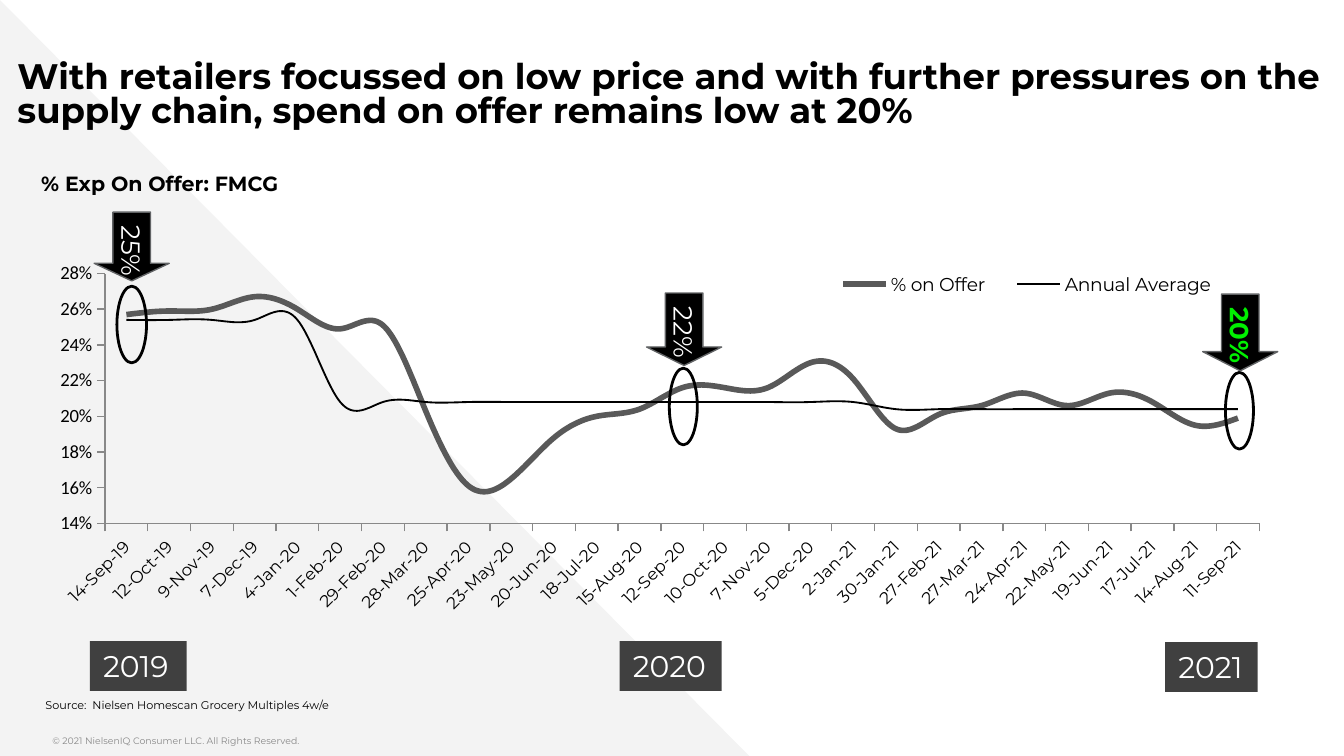
import pptx
import pptx.chart.data
import pptx.dml.color
import pptx.enum.chart
import pptx.enum.shapes
import pptx.enum.text
import pptx.oxml
import pptx.oxml.ns
import pptx.util

Cm, Pt = pptx.util.Cm, pptx.util.Pt
SHAPE = pptx.enum.shapes.MSO_SHAPE
ANCHOR = pptx.enum.text.MSO_ANCHOR
ALIGN = pptx.enum.text.PP_ALIGN
qn = pptx.oxml.ns.qn

FONT = "Montserrat"
COLORS = {
    "black": "000000", "white": "FFFFFF", "green": "00F000",
    "wedge": "F3F3F3", "muted": "888888", "year": "404040",
    "offer": "595959", "arrow_edge": "616365",
}

# Four-weekly periods as date serials, 14-Sep-19 to 11-Sep-21
PERIODS = range(43722, 44451, 28)
ON_OFFER = [
    0.257, 0.259, 0.26, 0.267, 0.26, 0.249, 0.251, 0.203, 0.161,
    0.165, 0.188, 0.2, 0.204, 0.216, 0.216, 0.216, 0.23, 0.221,
    0.193, 0.201, 0.206, 0.213, 0.206, 0.213, 0.208, 0.195, 0.199,
]
ANNUAL_AVERAGE = [0.254] * 5 + [0.208] * 13 + [0.204] * 9


def rgb(name):
    return pptx.dml.color.RGBColor.from_string(COLORS[name])


def style_font(font, size, color="black", bold=False, name=FONT):
    font.name, font.size, font.bold = name, Pt(size), bold
    font.color.rgb = rgb(color)


def add_shape(slide, kind, box, fill=None, line=None, width=0.75):
    shape = slide.shapes.add_shape(kind, *map(Cm, box))
    shape.shadow.inherit = False
    if fill:
        shape.fill.solid()
        shape.fill.fore_color.rgb = rgb(fill)
    else:
        shape.fill.background()
    if line:
        shape.line.color.rgb = rgb(line)
        shape.line.width = Pt(width)
    else:
        shape.line.fill.background()
    return shape


def write(shape, text, size, color="black", bold=False, align=ALIGN.LEFT,
          anchor=ANCHOR.TOP, wrap=False):
    frame = shape.text_frame
    frame.text = text
    frame.word_wrap = wrap
    frame.vertical_anchor = anchor
    paragraph = frame.paragraphs[0]
    paragraph.alignment = align
    style_font(paragraph.font, size, color, bold)
    return frame


def set_insets(frame, left, vertical):
    frame.margin_left, frame.margin_right = Cm(left), 0
    frame.margin_top = frame.margin_bottom = Cm(vertical)


def add_text(slide, box, text, size, **style):
    return write(slide.shapes.add_textbox(*map(Cm, box)), text, size, **style)


def add_title(slide, text):
    title = slide.shapes.title
    title.left, title.top, title.width, title.height = map(Cm, (0.33, 0.94, 25.17, 1.75))
    frame = write(title, text, 19, bold=True, anchor=ANCHOR.MIDDLE, wrap=True)
    frame.auto_size = pptx.enum.text.MSO_AUTO_SIZE.NONE
    set_insets(frame, 0, 0.25)
    frame.paragraphs[0].line_spacing = 0.8


def add_callout(slide, box, text, color="white", bold=False):
    arrow = add_shape(slide, SHAPE.DOWN_ARROW, box, "black", "arrow_edge")
    arrow.adjustments[0], arrow.adjustments[1] = 0.5, 0.255
    frame = write(arrow, text, 14, color, bold, ALIGN.CENTER, ANCHOR.MIDDLE)
    frame._txBody.bodyPr.set("vert", "eaVert")


def add_year(slide, box, year):
    write(add_shape(slide, SHAPE.RECTANGLE, box, "year"), year, 16, "white")


def manual_layout(x, y, w, h, inner=False):
    target = '<c:layoutTarget val="inner"/>' if inner else ""
    return pptx.oxml.parse_xml(
        f'<c:layout {pptx.oxml.ns.nsdecls("c")}><c:manualLayout>{target}'
        '<c:xMode val="edge"/><c:yMode val="edge"/>'
        f'<c:x val="{x}"/><c:y val="{y}"/><c:w val="{w}"/><c:h val="{h}"/>'
        '</c:manualLayout></c:layout>')


def style_axis(axis, size, font_name):
    axis.has_major_gridlines = False
    axis.major_tick_mark = pptx.enum.chart.XL_TICK_MARK.OUTSIDE
    axis.minor_tick_mark = pptx.enum.chart.XL_TICK_MARK.NONE
    axis.format.line.color.rgb = rgb("muted")
    style_font(axis.tick_labels.font, size, name=font_name)


def add_offer_chart(slide):
    data = pptx.chart.data.CategoryChartData(number_format="0.0%")
    data.categories = PERIODS
    data.categories.number_format = "d-mmm-yy"
    data.add_series("% on Offer", ON_OFFER)
    data.add_series("Annual Average", ANNUAL_AVERAGE)
    chart = slide.shapes.add_chart(
        pptx.enum.chart.XL_CHART_TYPE.LINE,
        *map(Cm, (0.81, 4.75, 24, 8.26)), data).chart
    chart.has_title = False
    style_font(chart.font, 18, name="Arial")

    # Lines
    for series, color, width in zip(chart.plots[0].series, ("offer", "black"), (3, 1)):
        series.smooth = True
        series.format.line.color.rgb = rgb(color)
        series.format.line.width = Pt(width)

    # Axes: percentages at left, slanted dates below
    percent = chart.value_axis
    style_axis(percent, 10, "Calibri")
    percent.minimum_scale, percent.maximum_scale, percent.major_unit = 0.14, 0.28, 0.02
    percent.tick_labels.number_format = "0%"
    percent.tick_labels.number_format_is_linked = False
    dates = chart.category_axis
    style_axis(dates, 9, FONT)
    dates.tick_label_position = pptx.enum.chart.XL_TICK_LABEL_POSITION.LOW
    dates.tick_labels.number_format = "d-mmm-yy"
    dates.tick_labels.number_format_is_linked = False
    dates._element.find(qn("c:txPr")).find(qn("a:bodyPr")).set("rot", "-2700000")
    dates._element.find(qn("c:auto")).set("val", "0")

    # Legend and plot positions
    chart.has_legend = True
    legend = chart.legend
    legend.position = pptx.enum.chart.XL_LEGEND_POSITION.RIGHT
    legend.include_in_layout = False
    style_font(legend.font, 10)
    for old in legend._element.findall(qn("c:layout")):
        legend._element.remove(old)
    legend._element.find(qn("c:legendPos")).addnext(manual_layout(0.61, 0.03, 0.33, 0.09))
    plot_area = chart._chartSpace.chart.plotArea
    for old in plot_area.findall(qn("c:layout")):
        plot_area.remove(old)
    plot_area.insert(0, manual_layout(0.049, 0.051, 0.909, 0.572, inner=True))


def main():
    deck = pptx.Presentation()
    deck.slide_width, deck.slide_height = Cm(25.4), Cm(14.29)
    slide = deck.slides.add_slide(deck.slide_layouts[5])

    # Background wedge, sent behind the title
    wedge = add_shape(slide, SHAPE.RIGHT_TRIANGLE, (0, 0, 14.2, 14.33), "wedge")
    slide.shapes._spTree.insert(2, wedge._element)

    # Headings and chart
    add_title(slide, "With retailers focussed on low price and with further pressures "
                     "on the supply chain, spend on offer remains low at 20%")
    add_offer_chart(slide)
    add_text(slide, (0.53, 3.1, 5.03, 0.74), "% Exp On Offer: FMCG", 11, bold=True)

    # September highlights
    for ring in ((2.21, 5.41, 0.56, 1.45), (12.65, 6.96, 0.53, 1.45), (23.16, 7.04, 0.53, 1.45)):
        add_shape(slide, SHAPE.OVAL, ring, line="black", width=1.5)
    add_callout(slide, (1.78, 4.01, 1.42, 1.3), "25%")
    add_callout(slide, (12.22, 5.54, 1.42, 1.37), "22%")
    add_callout(slide, (22.73, 5.56, 1.42, 1.45), "20%", "green", bold=True)

    # Year tags
    add_year(slide, (1.7, 12.12, 1.83, 0.94), "2019")
    add_year(slide, (11.71, 12.12, 1.93, 0.94), "2020")
    add_year(slide, (22.02, 12.14, 1.75, 0.94), "2021")

    # Source and copyright
    source = add_text(slide, (0.56, 13.08, 12.7, 1.2),
                      "Source:  Nielsen Homescan Grocery Multiples 4w/e", 6, wrap=True)
    set_insets(source, 0.3, 0.25)
    rights = add_text(slide, (0.99, 13.79, 14.07, 0.5),
                      "© 2021 NielsenIQ Consumer LLC. All Rights Reserved.", 5,
                      color="muted", wrap=True)
    set_insets(rights, 0, 0.13)

    deck.save("out.pptx")


if __name__ == "__main__":
    main()
